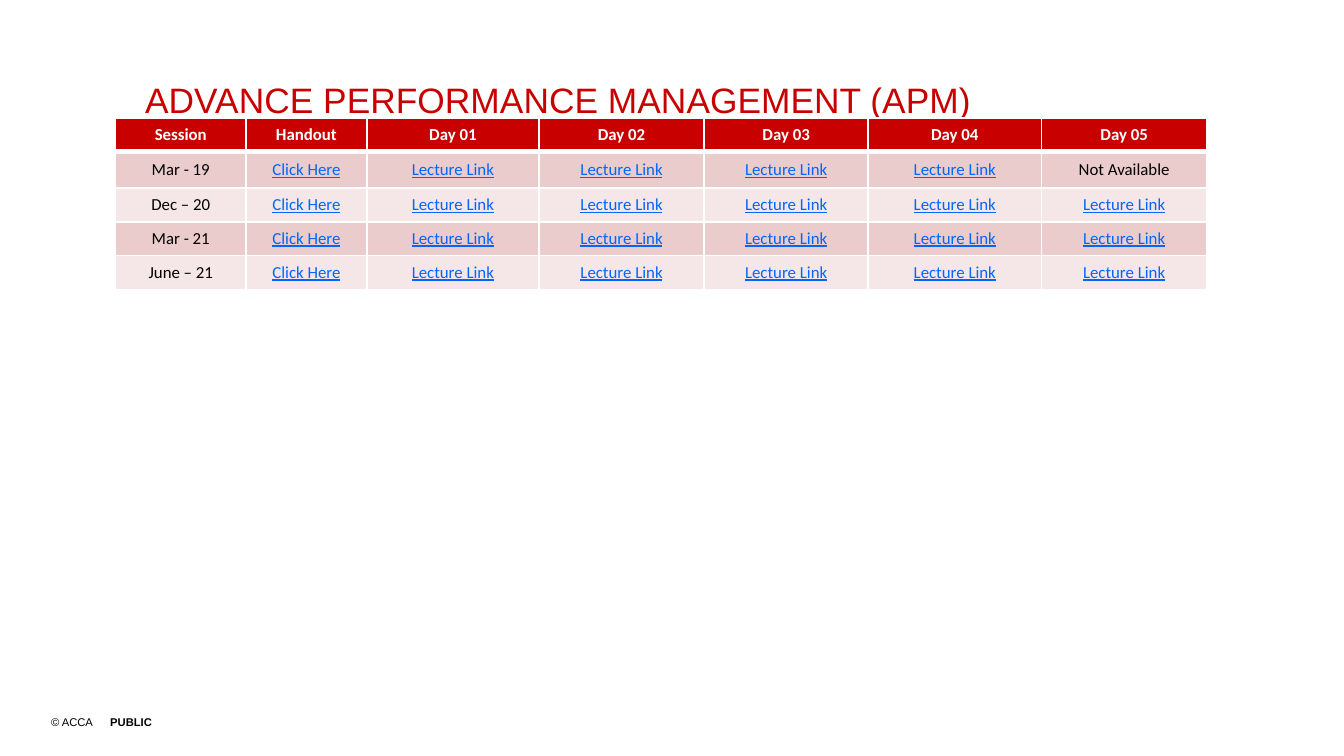
import pptx
import pptx.dml.color
import pptx.enum.text
import pptx.oxml
import pptx.oxml.ns
import pptx.util
from pptx.util import Inches

RED, WHITE, BLACK, BLUE = "C80000", "FFFFFF", "000000", "0066FF"
BANDS = ("EBCCCC", "F5E7E7")
NAMESPACE = pptx.oxml.ns.nsdecls("a")


def color(value):
    return pptx.dml.color.RGBColor.from_string(value)


class SlideBuilder:
    heading_font = "Arial"
    table_font = "Calibri"

    def __init__(self, presentation):
        self.slide = presentation.slides.add_slide(presentation.slide_layouts[5])

    def format_run(self, run, font, size, fill, bold=False, underline=False):
        run.font.name = font
        run.font.size = pptx.util.Pt(size)
        run.font.color.rgb = color(fill)
        run.font.bold = bold
        run.font.underline = underline

    def clear_margins(self, frame):
        frame.margin_left = frame.margin_right = 0
        frame.margin_top = frame.margin_bottom = 0

    def title(self, text, left, top, width, height):
        shape = self.slide.shapes.title
        shape.left, shape.top = Inches(left), Inches(top)
        shape.width, shape.height = Inches(width), Inches(height)
        frame = shape.text_frame
        frame.text = text
        frame.word_wrap = True
        frame.auto_size = pptx.enum.text.MSO_AUTO_SIZE.NONE
        frame.vertical_anchor = pptx.enum.text.MSO_ANCHOR.MIDDLE
        self.clear_margins(frame)
        frame.margin_left = Inches(0.06)
        paragraph = frame.paragraphs[0]
        paragraph.alignment = pptx.enum.text.PP_ALIGN.LEFT
        paragraph.line_spacing = 0.95
        self.format_run(paragraph.runs[0], self.heading_font, 18.9, RED)

    def footer(self, owner, label, left, top, width, height):
        shape = self.slide.shapes.add_textbox(
            Inches(left), Inches(top), Inches(width), Inches(height))
        frame = shape.text_frame
        frame.word_wrap = True
        self.clear_margins(frame)
        paragraph = frame.paragraphs[0]
        paragraph._p.get_or_add_pPr().append(pptx.oxml.parse_xml(
            f'<a:tabLst {NAMESPACE}><a:tab pos="{Inches(0.44)}" algn="l"/></a:tabLst>'))
        for text, bold in ((owner + "\t", False), (label, True)):
            run = paragraph.add_run()
            run.text = text
            self.format_run(run, self.heading_font, 6, BLACK, bold)

    def borders(self, cell, top, bottom):
        properties = cell._tc.get_or_add_tcPr()
        for side, points in (("L", 1), ("R", 1), ("T", top), ("B", bottom)):
            properties.append(pptx.oxml.parse_xml(
                f'<a:ln{side} {NAMESPACE} w="{pptx.util.Pt(points)}"><a:solidFill>'
                f'<a:srgbClr val="{WHITE}"/></a:solidFill></a:ln{side}>'))

    def cell(self, cell, text, row):
        header = row == 0
        link = text in ("Click Here", "Lecture Link")
        self.borders(cell, 3 if row == 1 else 1, 3 if header else 1)
        cell.fill.solid()
        cell.fill.fore_color.rgb = color(RED if header else BANDS[(row - 1) % 2])
        anchors = pptx.enum.text.MSO_ANCHOR
        cell.vertical_anchor = anchors.TOP if header else anchors.MIDDLE
        cell.text_frame.text = text
        paragraph = cell.text_frame.paragraphs[0]
        paragraph.alignment = pptx.enum.text.PP_ALIGN.CENTER
        fill = WHITE if header else BLUE if link else BLACK
        self.format_run(paragraph.runs[0], self.table_font, 9, fill, header, link)

    def table(self, rows, left, top, widths, heights):
        shape = self.slide.shapes.add_table(
            len(rows), len(widths), Inches(left), Inches(top),
            Inches(sum(widths)), Inches(sum(heights)))
        table = shape.table
        for column, width in zip(table.columns, widths):
            column.width = Inches(width)
        for row, height in zip(table.rows, heights):
            row.height = Inches(height)
        for row_index, texts in enumerate(rows):
            for column_index, text in enumerate(texts):
                self.cell(table.cell(row_index, column_index), text, row_index)


def main():
    presentation = pptx.Presentation()
    presentation.slide_width = Inches(10)
    presentation.slide_height = Inches(10 * 9 / 16)

    lectures = ["Lecture Link"] * 5
    sessions = {
        "Mar - 19": lectures[:4] + ["Not Available"],
        "Dec – 20": lectures,
        "Mar - 21": lectures,
        "June – 21": lectures,
    }
    rows = [["Session", "Handout"] + [f"Day {day:02}" for day in range(1, 6)]]
    rows += [[session, "Click Here"] + days for session, days in sessions.items()]

    builder = SlideBuilder(presentation)
    builder.footer("© ACCA", "PUBLIC", 0.38, 5.32, 1.78, 0.1)
    builder.title("ADVANCE PERFORMANCE MANAGEMENT (APM)", 1.02, 0.6, 7.96, 0.31)
    builder.table(rows, 0.86, 0.88,
                  [0.97, 0.9, 1.28, 1.23, 1.22, 1.29, 1.23],
                  [0.25, 0.27] + [0.25] * 3)
    presentation.save("out.pptx")


if __name__ == "__main__":
    main()
